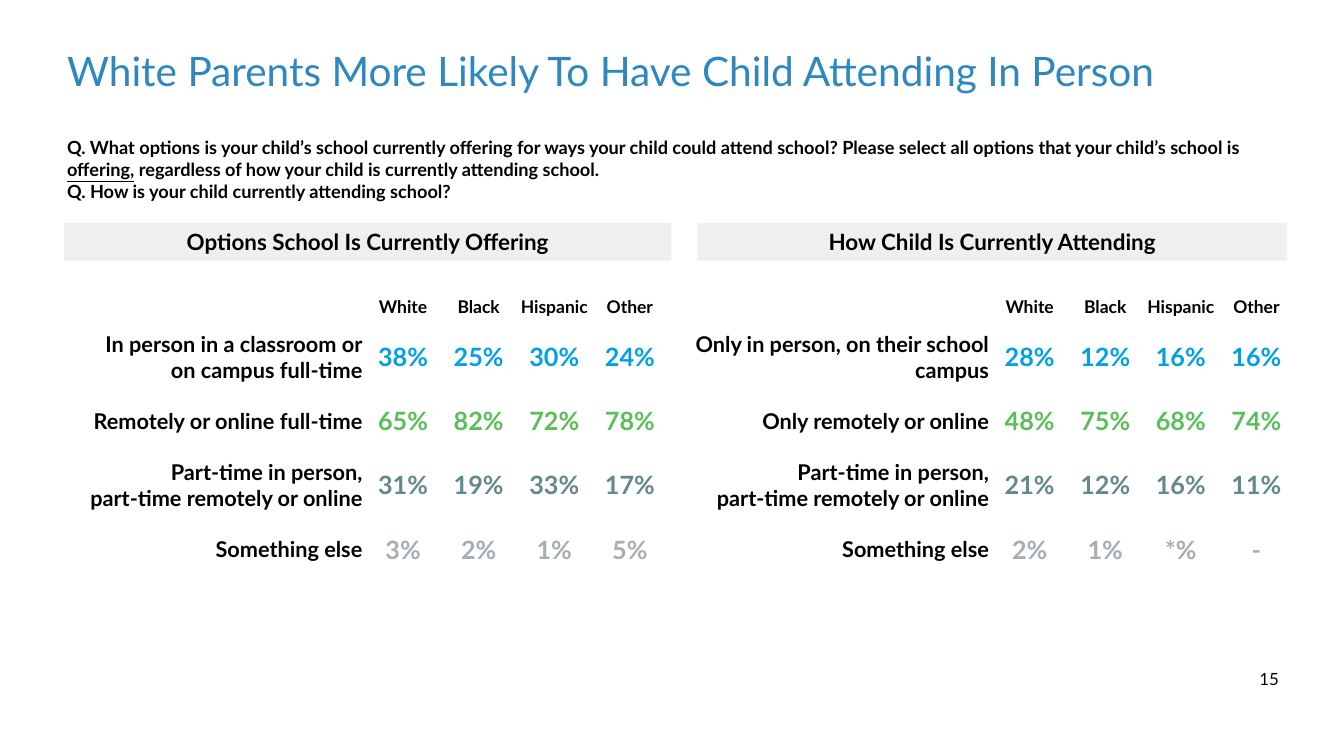
from dataclasses import dataclass

from pptx import Presentation
from pptx.dml.color import RGBColor
from pptx.enum import shapes, text
from pptx.util import Cm, Pt

COLORS = {
    "title": "2E88BF", "ink": "000000", "bar": "EEEFF1",
    "in_person": "02A0E7", "remote": "5ABF59", "mixed": "63898A", "other": "A7ADB5",
}
GROUPS = ["White", "Black", "Hispanic", "Other"]
ROW_COLORS = ["in_person", "remote", "mixed", "other"]
SIDES = ("left", "top", "right", "bottom")
LEFT, CENTER, RIGHT = text.PP_ALIGN.LEFT, text.PP_ALIGN.CENTER, text.PP_ALIGN.RIGHT
TOP, MIDDLE = text.MSO_ANCHOR.TOP, text.MSO_ANCHOR.MIDDLE


@dataclass
class Panel:
    heading: str
    bar_left: float
    bar_width: float
    table_left: float
    rows: list[tuple[str, list[str]]]


PANELS = [
    Panel("Options School Is Currently Offering", 3.23, 30.61, 2.79, [
        ("In person in a classroom or\von campus full-time", ["38%", "25%", "30%", "24%"]),
        ("Remotely or online full-time", ["65%", "82%", "72%", "78%"]),
        ("Part-time in person,\vpart-time remotely or online", ["31%", "19%", "33%", "17%"]),
        ("Something else", ["3%", "2%", "1%", "5%"]),
    ]),
    Panel("How Child Is Currently Attending", 35.15, 29.72, 34.37, [
        ("Only in person, on their school\vcampus", ["28%", "12%", "16%", "16%"]),
        ("Only remotely or online", ["48%", "75%", "68%", "74%"]),
        ("Part-time in person,\vpart-time remotely or online", ["21%", "12%", "16%", "11%"]),
        ("Something else", ["2%", "1%", "*%", "-"]),
    ]),
]

QUESTIONS = [
    [("Q. What options is your child’s school currently offering for ways your child "
      "could attend school? Please select all options that your child’s school is ", False),
     ("offering,", True),
     (" regardless of how your child is currently attending school.", False)],
    [("Q. How is your child currently attending school?", False)],
]


def color(name: str) -> RGBColor:
    return RGBColor.from_string(COLORS[name])


def style(font, size: float, ink: str = "ink", bold: bool = True) -> None:
    for key, value in {"name": "Lato", "size": Pt(size), "bold": bold}.items():
        setattr(font, key, value)
    font.color.rgb = color(ink)


def set_up_frame(frame, anchor=TOP, wrap: bool = True) -> None:
    formats = {"word_wrap": wrap, "vertical_anchor": anchor,
               "auto_size": text.MSO_AUTO_SIZE.NONE}
    formats |= {f"margin_{side}": Cm(0.2) for side in SIDES}
    for key, value in formats.items():
        setattr(frame, key, value)


def write(frame, words: str, size: float, align, ink: str = "ink", bold: bool = True) -> None:
    frame.text = words
    para = frame.paragraphs[0]
    para.alignment = align
    for span in para.runs:
        style(span.font, size, ink, bold)


def fill_cell(cell, words: str, size: float, align, ink: str = "ink", margin: float = 0.15) -> None:
    cell.vertical_anchor = MIDDLE
    for side in SIDES:
        setattr(cell, f"margin_{side}", Cm(margin))
    write(cell.text_frame, words, size, align, ink)


def draw_table(page, panel: Panel) -> None:
    holder = page.shapes.add_table(5, 5, Cm(panel.table_left), Cm(14.58), Cm(30.86), Cm(14.72))
    table = holder.table
    table.first_row = table.horz_banding = False
    for column, width in zip(table.columns, [15.62] + [3.81] * 4):
        column.width = Cm(width)
    for row, height in zip(table.rows, [1.8] + [3.23] * 4):
        row.height = Cm(height)
    for cell in table.iter_cells():
        cell.fill.background()

    for c, group in enumerate(GROUPS, 1):
        margin = 0.1 if group == "Hispanic" else 0.15
        fill_cell(table.cell(0, c), group, 25, CENTER, margin=margin)
    for r, ((label, values), ink) in enumerate(zip(panel.rows, ROW_COLORS), 1):
        fill_cell(table.cell(r, 0), label, 31, RIGHT)
        for c, value in enumerate(values, 1):
            fill_cell(table.cell(r, c), value, 36, CENTER, ink)


def draw_bar(page, panel: Panel) -> None:
    bar = page.shapes.add_shape(shapes.MSO_SHAPE.RECTANGLE, Cm(panel.bar_left), Cm(11.23),
                                Cm(panel.bar_width), Cm(1.91))
    bar.shadow.inherit = False
    bar.fill.solid()
    bar.fill.fore_color.rgb = color("bar")
    bar.line.fill.background()
    set_up_frame(bar.text_frame, MIDDLE)
    write(bar.text_frame, panel.heading, 32, CENTER)


def draw_title(page) -> None:
    title = page.shapes.title
    place = {"left": 3.18, "top": 2.13, "width": 61.39, "height": 5.28}
    for key, value in place.items():
        setattr(title, key, Cm(value))
    set_up_frame(title.text_frame)
    write(title.text_frame, "White Parents More Likely To Have Child Attending In Person",
          58, LEFT, "title", False)


def draw_questions(page) -> None:
    box = page.shapes.add_textbox(Cm(3.18), Cm(6.68), Cm(61.39), Cm(3.71))
    frame = box.text_frame
    set_up_frame(frame)
    for i, pieces in enumerate(QUESTIONS):
        para = frame.add_paragraph() if i else frame.paragraphs[0]
        for words, underlined in pieces:
            span = para.add_run()
            span.text = words
            style(span.font, 25.9)
            span.font.underline = underlined


def draw_page_number(page) -> None:
    box = page.shapes.add_textbox(Cm(63.35), Cm(33.5), Cm(1.24), Cm(1.42))
    set_up_frame(box.text_frame, wrap=False)
    write(box.text_frame, "15", 24, CENTER, bold=False)


def main() -> None:
    deck = Presentation()
    deck.slide_width, deck.slide_height = Cm(67.74), Cm(38.1)
    page = deck.slides.add_slide(deck.slide_layouts[5])

    # Heading and survey questions
    draw_title(page)
    draw_questions(page)

    # Two panels: heading bar over a table of shares
    for panel in PANELS:
        draw_bar(page, panel)
        draw_table(page, panel)

    # Footer
    draw_page_number(page)
    deck.save("out.pptx")


if __name__ == "__main__":
    main()
